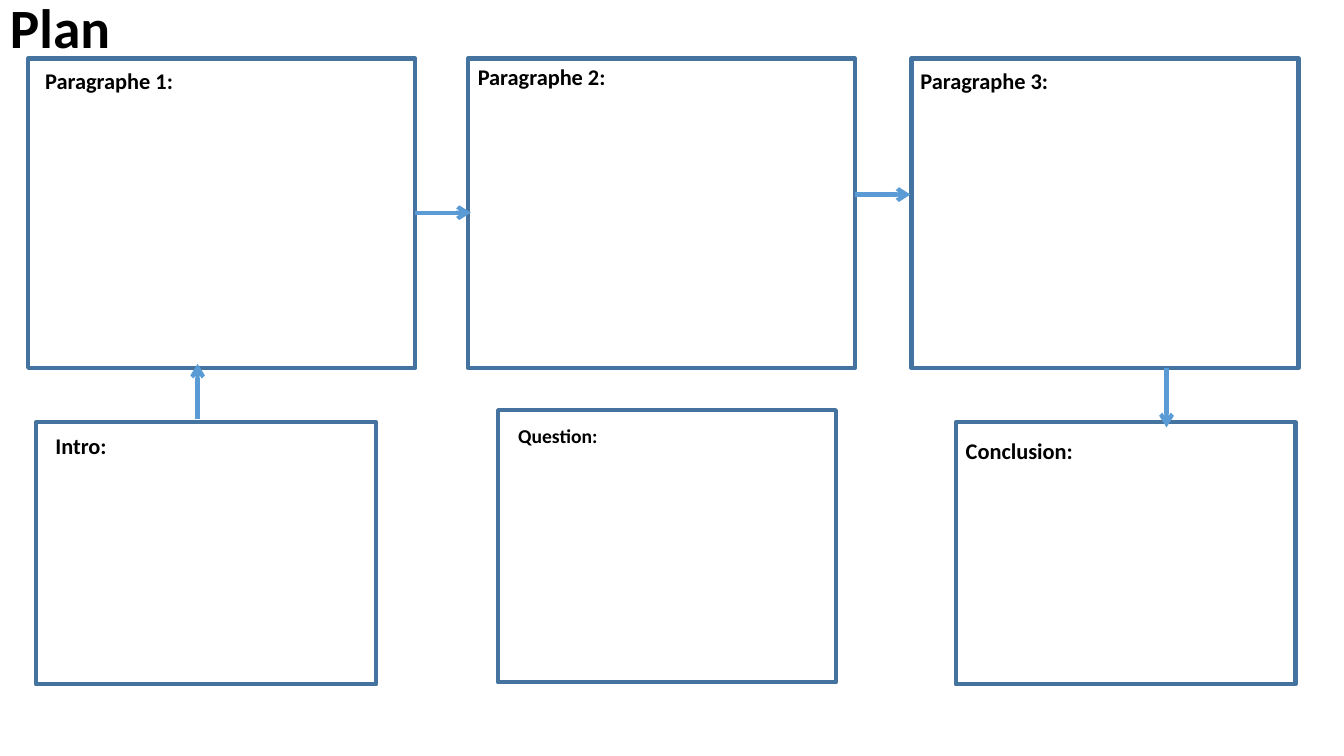
from dataclasses import dataclass

from lxml import etree
from pptx import Presentation
from pptx.dml.color import RGBColor
from pptx.enum import shapes, text
from pptx.oxml import ns
from pptx.slide import Slide
from pptx.util import Inches, Pt


@dataclass(frozen=True)
class Theme:
    font: str = "Calibri"
    ink: RGBColor = RGBColor(0x00, 0x00, 0x00)
    frame: RGBColor = RGBColor(0x43, 0x73, 0x9E)
    arrow: RGBColor = RGBColor(0x5B, 0x9B, 0xD5)
    line_width: float = 3
    title_size: float = 39.6
    label_size: float = 16
    question_size: float = 14


@dataclass(frozen=True)
class Frame:
    left: float
    top: float
    width: float
    height: float


@dataclass(frozen=True)
class Label:
    wording: str
    left: float
    top: float
    width: float
    height: float = 0.37
    size: float = Theme.label_size
    wrap: bool = False


@dataclass(frozen=True)
class Arrow:
    x1: float
    y1: float
    x2: float
    y2: float


THEME = Theme()

PARAGRAPH_TOP, PARAGRAPH_WIDTH, PARAGRAPH_HEIGHT = 0.58, 3.84, 3.07
PARAGRAPH_LEFTS = (0.28, 4.64, 9.04)
ENDING_TOP, ENDING_WIDTH, ENDING_HEIGHT = 4.19, 3.37, 2.6
ENDING_LEFTS = (0.36, 9.48)

FRAMES = [
    Frame(4.94, 4.07, 3.35, 2.7),
    *(Frame(left, ENDING_TOP, ENDING_WIDTH, ENDING_HEIGHT)
      for left in ENDING_LEFTS),
    *(Frame(left, PARAGRAPH_TOP, PARAGRAPH_WIDTH, PARAGRAPH_HEIGHT)
      for left in PARAGRAPH_LEFTS),
]

ARROWS = [
    Arrow(1.96, 4.16, 1.96, 3.61),
    Arrow(4.12, 2.11, 4.67, 2.11),
    Arrow(8.48, 1.93, 9.03, 1.93),
    Arrow(11.57, 3.65, 11.57, 4.24),
]

LABELS = [
    Label("Question:", 5.04, 4.16, 2.47, 0.81, THEME.question_size, wrap=True),
    Label("Intro:", 0.45, 4.24, 0.72),
    Label("Paragraphe 1:", 0.35, 0.62, 1.49),
    Label("Paragraphe 2:", 4.64, 0.58, 1.49),
    Label("Paragraphe 3:", 9.03, 0.62, 1.49),
    Label("Conclusion:", 9.48, 4.29, 1.28),
]

TITLE = Label("Plan", 0, 0, 1.32, 0.61, THEME.title_size, wrap=True)


def draw_frame(slide: Slide, frame: Frame) -> None:
    box = slide.shapes.add_shape(
        shapes.MSO_SHAPE.RECTANGLE, Inches(frame.left), Inches(frame.top),
        Inches(frame.width), Inches(frame.height))
    box.shadow.inherit = False
    box.fill.background()
    box.line.color.rgb = THEME.frame
    box.line.width = Pt(THEME.line_width)


def draw_arrow(slide: Slide, arrow: Arrow) -> None:
    connector = slide.shapes.add_connector(
        shapes.MSO_CONNECTOR.STRAIGHT, Inches(arrow.x1), Inches(arrow.y1),
        Inches(arrow.x2), Inches(arrow.y2))
    connector.line.color.rgb = THEME.arrow
    connector.line.width = Pt(THEME.line_width)
    outline = connector.line._get_or_add_ln()
    etree.SubElement(outline, ns.qn("a:tailEnd"), type="arrow")
    etree.SubElement(connector._element.spPr, ns.qn("a:effectLst"))


def draw_label(slide: Slide, label: Label,
               anchor: text.MSO_ANCHOR = text.MSO_ANCHOR.TOP,
               line_spacing: float = 1.0) -> None:
    box = slide.shapes.add_textbox(
        Inches(label.left), Inches(label.top),
        Inches(label.width), Inches(label.height))
    frame = box.text_frame
    frame.word_wrap = label.wrap
    frame.vertical_anchor = anchor
    paragraph = frame.paragraphs[0]
    paragraph.line_spacing = line_spacing
    run = paragraph.add_run()
    run.text = label.wording
    run.font.name = THEME.font
    run.font.size = Pt(label.size)
    run.font.bold = True
    run.font.color.rgb = THEME.ink


def main() -> None:
    presentation = Presentation()
    presentation.slide_width = Inches(13.33)
    presentation.slide_height = Inches(7.5)
    slide = presentation.slides.add_slide(presentation.slide_layouts[6])

    draw_label(slide, TITLE, text.MSO_ANCHOR.MIDDLE, line_spacing=0.9)
    for frame in FRAMES:
        draw_frame(slide, frame)
    for arrow in ARROWS:
        draw_arrow(slide, arrow)
    for label in LABELS:
        draw_label(slide, label)

    presentation.save("out.pptx")


if __name__ == "__main__":
    main()
